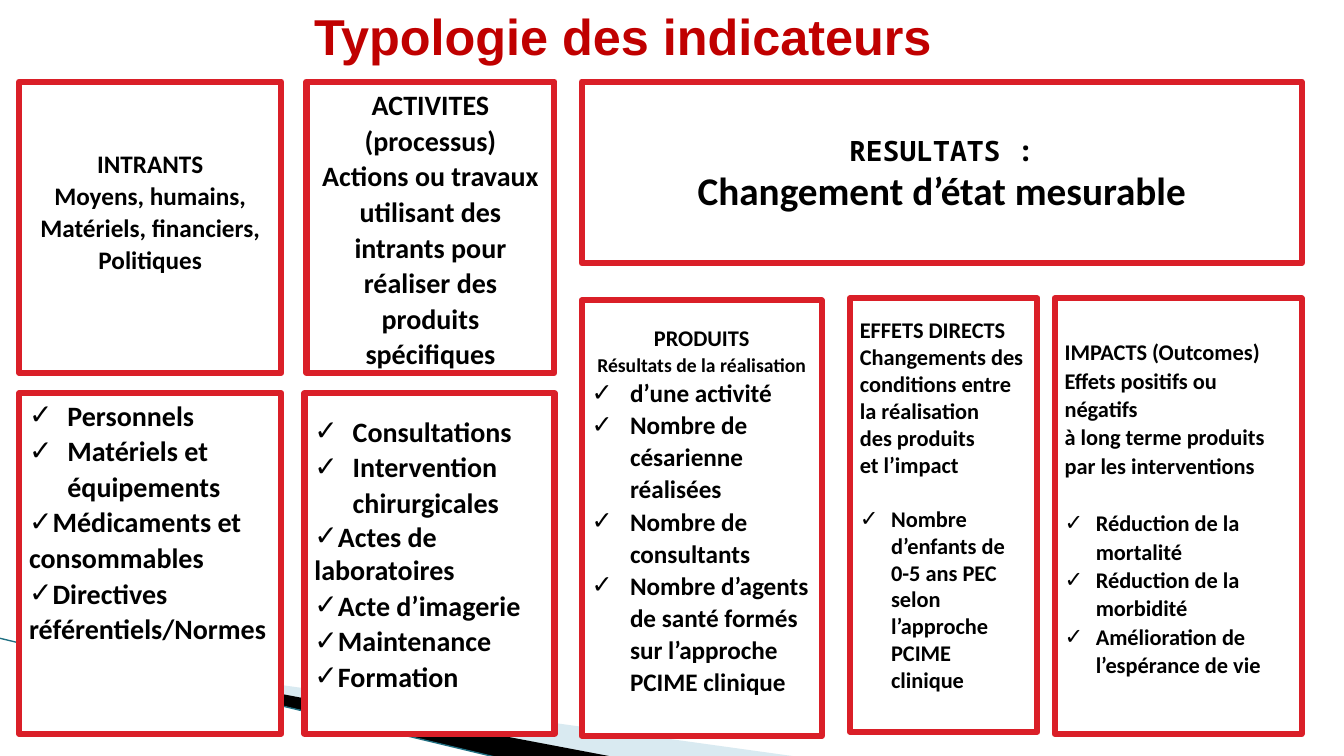
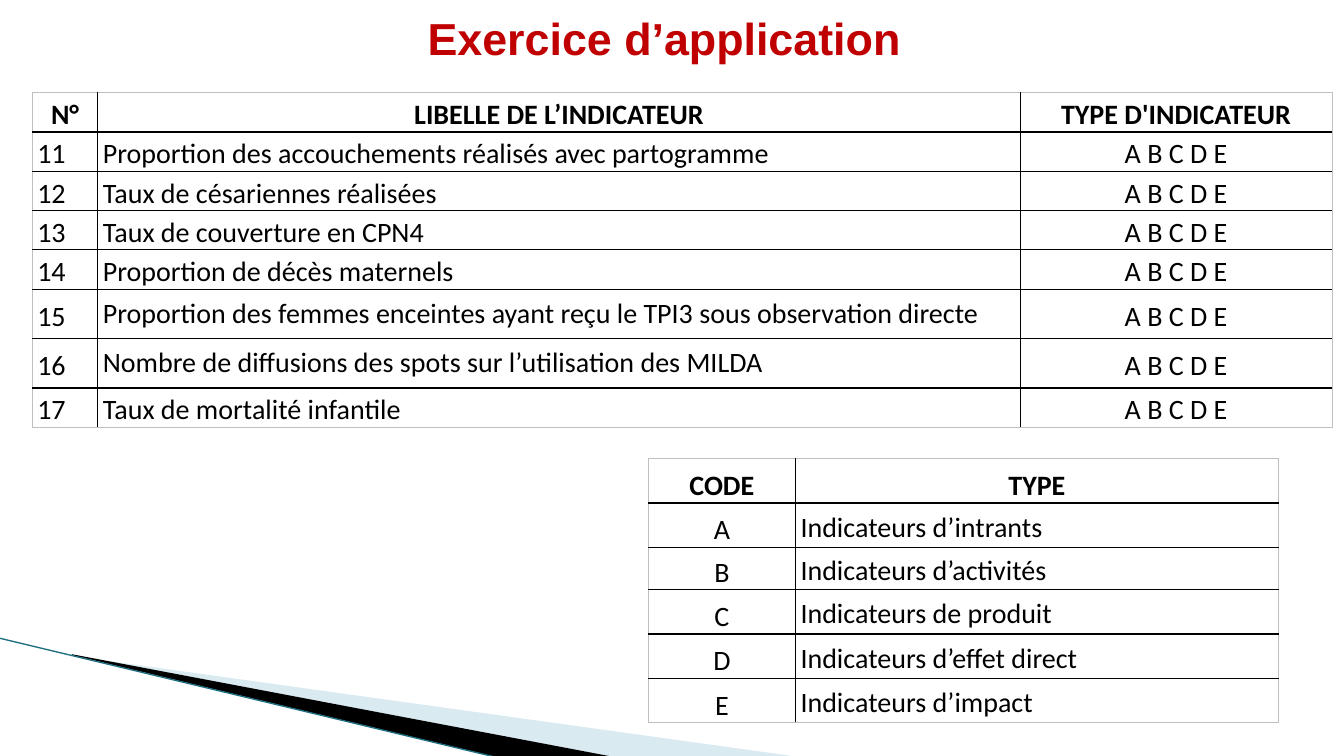
from dataclasses import dataclass
from typing import NamedTuple, Optional

import pptx
import pptx.dml.color
import pptx.enum.shapes
import pptx.enum.text
import pptx.oxml.ns
import pptx.oxml.xmlchemy
import pptx.util
from lxml import etree

Inches = pptx.util.Inches
Pt = pptx.util.Pt
Align = pptx.enum.text.PP_ALIGN
Anchor = pptx.enum.text.MSO_ANCHOR
qn = pptx.oxml.ns.qn


# Shared colours, fonts and sizes
@dataclass(frozen=True)
class Theme:
    title: str = "C00000"
    border: str = "DA1F28"
    ink: str = "000000"
    paper: str = "FFFFFF"
    pale: str = "A0CBDC"
    edge: str = "1F6F82"
    table_edge: str = "BFBFBF"
    title_font: str = "Arial"
    body_font: str = "Calibri"
    mono_font: str = "Noto Sans Mono"
    border_width: float = 4.33
    body_size: float = 20
    bullet: str = "✓"


THEME = Theme()


class Line(NamedTuple):
    text: str
    size: float = THEME.body_size
    hang: Optional[float] = None  # bullet indent; None means no bullet
    align: Align = Align.LEFT
    spacing: float = 1.06
    before: float = 0
    font: str = THEME.body_font


class Card(NamedTuple):
    left: float
    top: float
    width: float
    height: float
    lines: list[Line]
    inset: Optional[float] = None  # top inset; None means centred vertically


class Grid(NamedTuple):
    left: float
    top: float
    columns: list[float]
    heights: list[float]
    rows: list[tuple[str, ...]]
    aligns: list[Align]
    anchors: list[Anchor]


def colour(code: str) -> pptx.dml.color.RGBColor:
    return pptx.dml.color.RGBColor.from_string(code)


def write(paragraph, line: Line, code: str = THEME.ink, bold: bool = True) -> None:
    paragraph.text = line.text
    paragraph.alignment = line.align
    paragraph.line_spacing = line.spacing
    if line.before:
        paragraph.space_before = Pt(line.before)
    if line.hang is not None:
        properties = paragraph._p.get_or_add_pPr()
        properties.set("marL", str(Inches(line.hang)))
        properties.set("indent", str(-Inches(line.hang)))
        etree.SubElement(properties, qn("a:buFont")).set("typeface", THEME.title_font)
        etree.SubElement(properties, qn("a:buChar")).set("char", THEME.bullet)
    for span in paragraph.runs:
        span.font.name = line.font
        span.font.size = Pt(line.size)
        span.font.bold = bold
        span.font.color.rgb = colour(code)


def add_title(page, text: str, left: float, top: float, width: float,
              height: float, size: float) -> None:
    box = page.shapes.add_textbox(Inches(left), Inches(top), Inches(width), Inches(height))
    frame = box.text_frame
    frame.word_wrap = True
    frame.vertical_anchor = Anchor.MIDDLE
    line = Line(text, size, align=Align.CENTER, spacing=0.8, font=THEME.title_font)
    write(frame.paragraphs[0], line, THEME.title)


def add_blade(page, points: list[tuple[float, float]], code: str,
              opacity: int = 100) -> None:
    corners = [(Inches(x), Inches(y)) for x, y in points]
    builder = page.shapes.build_freeform(*corners[0])
    builder.add_line_segments(corners[1:], close=True)
    blade = builder.convert_to_shape()
    blade.shadow.inherit = False
    blade.fill.solid()
    blade.fill.fore_color.rgb = colour(code)
    blade.line.fill.background()
    if opacity < 100:
        tint = blade._element.spPr.find(qn("a:solidFill"))[0]
        etree.SubElement(tint, qn("a:alpha")).set("val", str(opacity * 1000))


def add_page(deck):
    """Blank page with the corner decoration."""
    page = deck.slides.add_slide(deck.slide_layouts[6])
    add_blade(page, [(0.73, 6.51), (7.93, 7.51), (6.08, 7.51), (0.73, 6.5)], THEME.pale, 40)
    add_blade(page, [(0.71, 6.49), (6.09, 7.51), (4.96, 7.52), (0.72, 6.5)], THEME.ink)
    edge = page.shapes.add_connector(
        pptx.enum.shapes.MSO_CONNECTOR.STRAIGHT,
        Inches(-0.01), Inches(6.33), Inches(4.95), Inches(7.52))
    edge.line.color.rgb = colour(THEME.edge)
    edge.line.width = Pt(0.95)
    etree.SubElement(edge._element.spPr, qn("a:effectLst"))
    return page


def add_card(page, card: Card) -> None:
    box = page.shapes.add_shape(
        pptx.enum.shapes.MSO_SHAPE.RECTANGLE, Inches(card.left), Inches(card.top),
        Inches(card.width), Inches(card.height))
    box.shadow.inherit = False
    box.fill.solid()
    box.fill.fore_color.rgb = colour(THEME.paper)
    box.line.color.rgb = colour(THEME.border)
    box.line.width = Pt(THEME.border_width)
    frame = box.text_frame
    frame.word_wrap = True
    frame.vertical_anchor = Anchor.MIDDLE
    if card.inset is not None:
        frame.vertical_anchor = Anchor.TOP
        frame.margin_top = Inches(card.inset)
    for index, line in enumerate(card.lines):
        write(frame.add_paragraph() if index else frame.paragraphs[0], line)


def set_border(cell, side: str, outer: bool) -> None:
    border = etree.SubElement(cell._tc.get_or_add_tcPr(), qn(f"a:ln{side}"))
    border.set("w", str(Pt(0.5 if outer else 1)))
    fill = etree.SubElement(border, qn("a:solidFill"))
    code = THEME.table_edge if outer else THEME.ink
    etree.SubElement(fill, qn("a:srgbClr")).set("val", code)


def add_grid(page, grid: Grid) -> None:
    last_row, last_column = len(grid.rows) - 1, len(grid.columns) - 1
    table = page.shapes.add_table(
        last_row + 1, last_column + 1, Inches(grid.left), Inches(grid.top),
        Inches(sum(grid.columns)), Inches(sum(grid.heights))).table
    table.first_row = table.horz_banding = False
    for column, width in zip(table.columns, grid.columns):
        column.width = Inches(width)
    for row, texts in enumerate(grid.rows):
        table.rows[row].height = Inches(grid.heights[row])
        for column, text in enumerate(texts):
            cell = table.cell(row, column)
            header = row == 0
            cell.margin_left = cell.margin_right = Inches(0.05)
            cell.margin_top = cell.margin_bottom = 0
            cell.vertical_anchor = Anchor.BOTTOM if header else grid.anchors[column]
            # Tall rows hold a single-spaced label
            single = grid.heights[row] > 0.45 and column == 1
            line = Line(text, align=Align.CENTER if header else grid.aligns[column],
                        spacing=1.0 if single else 1.15)
            write(cell.text_frame.paragraphs[0], line, bold=header)
            set_border(cell, "L", column == 0)
            set_border(cell, "R", column == last_column)
            set_border(cell, "T", row == 0)
            set_border(cell, "B", row == last_row)
            cell.fill.background()


# Content of the typology page
def centred(text: str, size: float = THEME.body_size) -> Line:
    return Line(text, size, align=Align.CENTER)


CARDS = [
    Card(3.04, 0.81, 2.46, 2.89, [
        centred("ACTIVITES (processus)"),
        centred("Actions ou travaux utilisant des intrants pour réaliser des "
                "produits spécifiques"),
    ], 0.04),
    Card(10.46, 2.96, 2.45, 4.32, [
        Line("IMPACTS (Outcomes)", 16),
        Line("Effets positifs ou négatifs", 16),
        Line("à long terme produits par les interventions", 16),
        Line("Réduction de la mortalité", 16, 0.31, before=20.5),
        Line("Réduction de la morbidité", 16, 0.31),
        Line("Amélioration de l’espérance de vie", 16, 0.31),
    ], 0.38),
    Card(3.02, 3.9, 2.48, 3.38, [
        Line("Consultations", hang=0.38),
        Line("Intervention chirurgicales", hang=0.38),
        Line("Actes de laboratoires", hang=0, spacing=1.0),
        Line("Acte d’imagerie", hang=0),
        Line("Maintenance", hang=0),
        Line("Formation", hang=0),
    ], 0.19),
    Card(0.19, 3.9, 2.6, 3.38, [
        Line("Personnels", hang=0.38),
        Line("Matériels et équipements", hang=0.38),
        Line("Médicaments et consommables", hang=0),
        Line("Directives référentiels/Normes", hang=0),
    ], 0.03),
    Card(0.19, 0.81, 2.6, 2.89, [
        centred("INTRANTS", 18),
        centred("Moyens, humains,", 18),
        centred("Matériels, financiers, Politiques", 18),
    ], 0.64),
    Card(5.77, 2.98, 2.38, 4.32, [
        centred("PRODUITS", 16),
        centred("Résultats de la réalisation", 14),
        Line("d’une activité", 18, 0.38),
        Line("Nombre de césarienne réalisées", 18, 0.38),
        Line("Nombre de consultants", 18, 0.38),
        Line("Nombre d’agents de santé formés sur l’approche PCIME clinique", 18, 0.38),
    ], 0.22),
    Card(5.77, 0.81, 7.14, 1.8, [
        Line("RESULTATS :", align=Align.CENTER, font=THEME.mono_font),
        Line("Changement d’état mesurable", 28, align=Align.CENTER, spacing=1.0),
    ]),
    Card(8.43, 2.96, 1.86, 4.3, [
        Line("EFFETS DIRECTS", 16, spacing=1.0),
        Line("Changements des conditions entre la réalisation", 16, spacing=1.0),
        Line("des produits", 16, spacing=1.0),
        Line("et l’impact", 16, spacing=1.0),
        Line("Nombre d’enfants de 0-5 ans PEC selon l’approche PCIME clinique",
             16, 0.31, spacing=1.0, before=19.5),
    ], 0.18),
]

# Content of the exercise page
INDICATORS = [
    "Proportion des accouchements réalisés avec partogramme",
    "Taux de césariennes réalisées",
    "Taux de couverture en CPN4",
    "Proportion de décès maternels",
    "Proportion des femmes enceintes ayant reçu le TPI3 sous observation directe",
    "Nombre de diffusions des spots sur l’utilisation des MILDA",
    "Taux de mortalité infantile",
]
KINDS = ["Indicateurs d’intrants", "Indicateurs d’activités", "Indicateurs de produit",
         "Indicateurs d’effet direct", "Indicateurs d’impact"]
CODES = "ABCDE"

EXERCISE = Grid(
    0.32, 0.92, [0.65, 9.15, 3.09], [0.39] * 5 + [0.49] * 2 + [0.39],
    [("N°", "LIBELLE DE L’INDICATEUR", "TYPE D'INDICATEUR")]
    + [(str(number), label, " ".join(CODES)) for number, label in enumerate(INDICATORS, 11)],
    [Align.JUSTIFY, Align.JUSTIFY, Align.CENTER], [Anchor.MIDDLE] * 3)
LEGEND = Grid(
    6.43, 4.55, [1.46, 4.79], [0.44, 0.44, 0.42, 0.44, 0.44, 0.44],
    [("CODE", "TYPE"), *zip(CODES, KINDS)],
    [Align.CENTER, Align.JUSTIFY], [Anchor.BOTTOM, Anchor.MIDDLE])


def main() -> None:
    deck = pptx.Presentation()
    deck.slide_width, deck.slide_height = Inches(13.33), Inches(7.5)

    typology = add_page(deck)
    for card in CARDS:
        add_card(typology, card)
    add_title(typology, "Typologie des indicateurs", 1.49, 0.11, 9.38, 0.59, 36)

    exercise = add_page(deck)
    add_title(exercise, "Exercice d’application", 0, 0.04, 13.18, 0.76, 32)
    for grid in (EXERCISE, LEGEND):
        add_grid(exercise, grid)

    deck.save("out.pptx")


if __name__ == "__main__":
    main()
